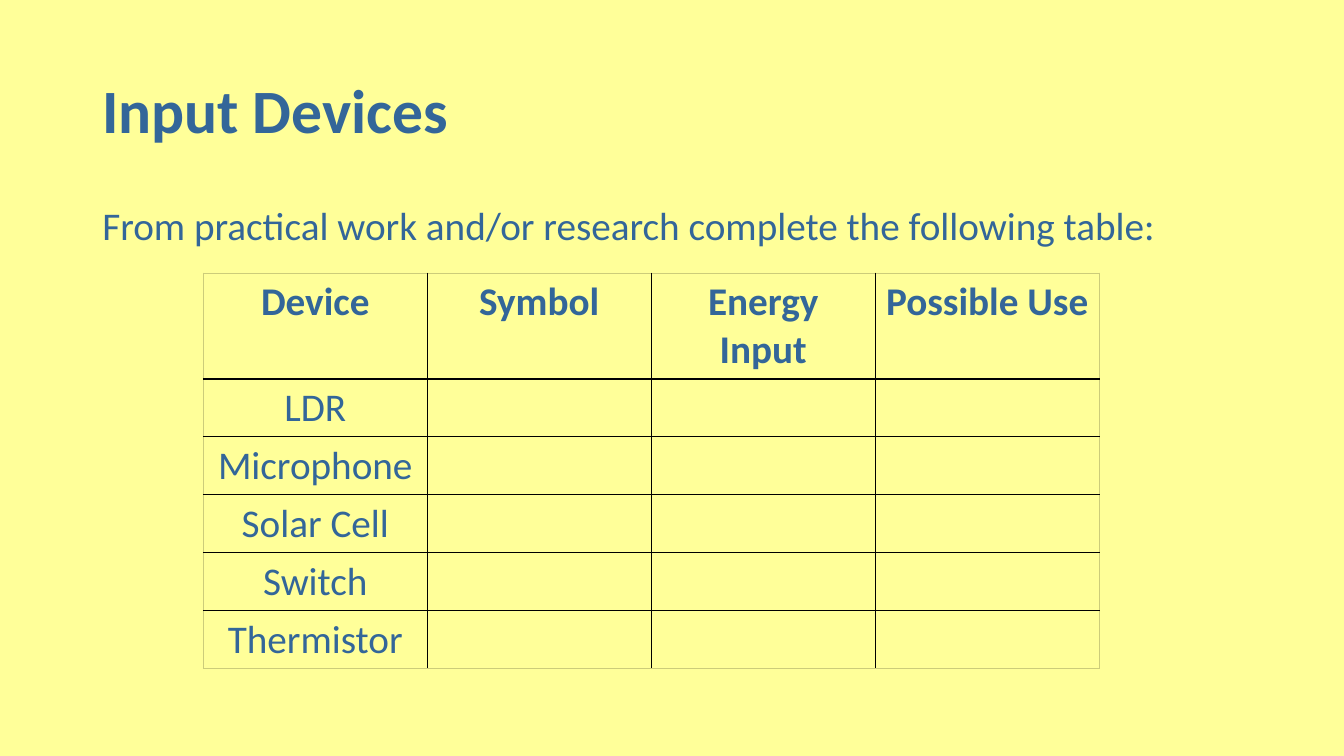
import pptx
import pptx.dml.color
import pptx.enum.text
import pptx.oxml.ns
import pptx.util
from lxml import etree

Pt = pptx.util.Pt
BLUE = "336699"
YELLOW = "FFFF99"
BLACK = "000000"
EDGE = "CCCC7A"


def color(value):
    return pptx.dml.color.RGBColor.from_string(value)


def add_text(para, text, size, bold=False):
    span = para.add_run()
    span.text = text
    span.font.name = "Calibri"
    span.font.size = Pt(size)
    span.font.bold = bold
    span.font.color.rgb = color(BLUE)


deck = pptx.Presentation()
deck.slide_width = Pt(960)
deck.slide_height = Pt(540)
page = deck.slides.add_slide(deck.slide_layouts[6])
page.background.fill.solid()
page.background.fill.fore_color.rgb = color(YELLOW)

anchors = pptx.enum.text.MSO_ANCHOR
headings = [
    ("Input Devices", 28.8, 104.4, 44, True, anchors.MIDDLE),
    ("From practical work and/or research complete the following table:",
     144, 50, 28, False, anchors.TOP),
]
for text, top, height, size, bold, anchor in headings:
    box = page.shapes.add_textbox(Pt(66), Pt(top), Pt(828), Pt(height))
    box.text_frame.word_wrap = True
    box.text_frame.vertical_anchor = anchor
    para = box.text_frame.paragraphs[0]
    para.line_spacing = 0.9
    add_text(para, text, size, bold)

labels = ["Device", "Symbol", "Energy Input", "Possible Use"]
devices = ["LDR", "Microphone", "Solar Cell", "Switch", "Thermistor"]
rows = [labels] + [[device, "", "", ""] for device in devices]
heights = [75.6] + [41.4] * len(devices)

frame = page.shapes.add_table(len(rows), len(labels), Pt(145.2), Pt(195.1),
                              Pt(640), Pt(sum(heights)))
table = frame.table
table.first_row = False
table.horz_banding = False
for column in table.columns:
    column.width = Pt(160)
for row, height in zip(table.rows, heights):
    row.height = Pt(height)

for r, texts in enumerate(rows):
    for c, text in enumerate(texts):
        cell = table.cell(r, c)
        para = cell.text_frame.paragraphs[0]
        para.alignment = pptx.enum.text.PP_ALIGN.CENTER
        if text:
            add_text(para, text, 28, r == 0)
        outer = {
            "a:lnL": c == 0,
            "a:lnR": c == len(labels) - 1,
            "a:lnT": r == 0,
            "a:lnB": r == len(rows) - 1,
        }
        properties = cell._tc.get_or_add_tcPr()
        for side, is_edge in outer.items():
            line = etree.SubElement(properties, pptx.oxml.ns.qn(side),
                                    w=str(Pt(0.75 if is_edge else 1)))
            fill = etree.SubElement(line, pptx.oxml.ns.qn("a:solidFill"))
            etree.SubElement(fill, pptx.oxml.ns.qn("a:srgbClr"),
                             val=EDGE if is_edge else BLACK)
        cell.fill.background()

deck.save("out.pptx")
